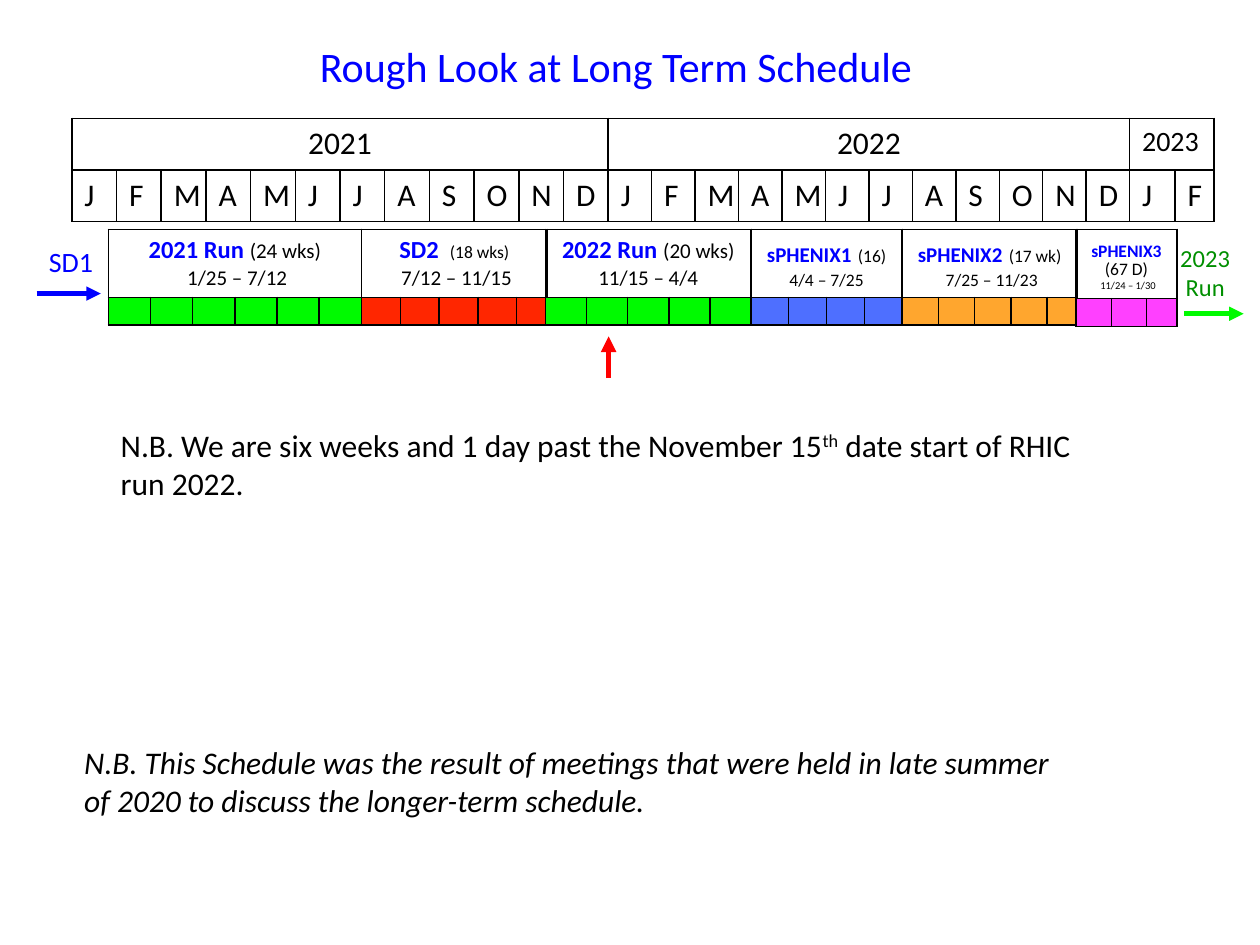
from lxml.etree import SubElement
from pptx import Presentation
from pptx.dml.color import RGBColor
from pptx.enum.shapes import MSO_CONNECTOR
from pptx.enum.text import PP_ALIGN
from pptx.oxml.ns import qn
from pptx.util import Inches, Pt

BLACK = RGBColor(0x00, 0x00, 0x00)
BLUE = RGBColor(0x00, 0x00, 0xFF)
RED = RGBColor(0xFF, 0x00, 0x00)
DARK_GREEN = RGBColor(0x00, 0x8F, 0x00)
GREEN = RGBColor(0x00, 0xFA, 0x00)
SCARLET = RGBColor(0xFF, 0x26, 0x00)
COBALT = RGBColor(0x04, 0x32, 0xFF)
ORANGE = RGBColor(0xFF, 0x93, 0x00)
MAGENTA = RGBColor(0xFF, 0x40, 0xFF)
FONT = "Calibri"
LEFT, CENTER = PP_ALIGN.LEFT, PP_ALIGN.CENTER

# Calendar: year, months shown, width in inches, size, alignment
CALENDAR_LEFT, CALENDAR_TOP, CALENDAR_ROW = 0.57, 0.94, 0.41
YEARS = [
    ("2021", "JFMAMJJASOND", [0.355] * 12, 18, CENTER),
    ("2022", "JFMAMJJASOND", [0.345] * 12, 18, CENTER),
    ("2023", "JF", [0.36, 0.31], 16, LEFT),
]

# Phases run on from one another. Lines hold (text, size) spans; the first line
# opens with its blue bold name.
PHASES_LEFT, PHASES_TOP, PHASE_ROWS = 0.86, 1.82, (0.54, 0.22)
PHASES = [
    {"name": [("2021 Run ", 14)], "lines": [[("(24 wks)", 12)], [(" 1/25 – 7/12", 12)]],
     "width": 2.01, "columns": 6, "fill": GREEN},
    {"name": [("SD2  ", 14)], "lines": [[("(18 wks)", 10)], [(" 7/12 – 11/15", 12)]],
     "width": 1.46, "columns": 5, "last": 0.23, "fill": SCARLET},
    {"name": [("2022 Run ", 14)], "lines": [[("(20 wks) 11/15 – 4/4", 12)]],
     "width": 1.63, "columns": 5, "fill": GREEN},
    {"name": [("sPHENIX1", 12), (" ", 16)], "lines": [[("(16) 4/4 – 7/25", 10)]],
     "width": 1.2, "columns": 4, "fill": COBALT, "opacity": 70},
    {"name": [("sPHENIX2", 12), (" ", 16)], "lines": [[("(17 wk)", 10)], [(" 7/25 – 11/23", 10)]],
     "width": 1.38, "columns": 5, "last": 0.23, "fill": ORANGE, "opacity": 82},
    {"name": [("sPHENIX3", 10), (" ", 16)],
     "lines": [[("(67 D)", 10)], [(" ", 8), ("11/24 – 1/30", 6)]],
     "width": 0.79, "columns": 3, "last": 0.23, "fill": MAGENTA, "spacing": 0.78},
]

# Text boxes: place, paragraphs of (text, superscript) spans, size, colour, style
TEXTS = [
    {"at": (0.29, 1.89, 0.56, 0.37), "paras": [["SD1"]], "size": 16, "color": BLUE, "wrap": False},
    {"at": (2.44, 0.27, 5.13, 0.5), "paras": [["Rough Look at Long Term Schedule"]],
     "size": 24, "color": BLUE},
    {"at": (9.2, 1.88, 0.73, 0.57), "paras": [["2023"], ["Run"]], "size": 14,
     "color": DARK_GREEN, "align": CENTER},
    {"at": (0.57, 5.85, 8.12, 0.71), "size": 18, "italic": True,
     "paras": [["N.B. This Schedule was the result of meetings that were held in late summer "
                "of 2020 to discuss the longer-term schedule."]]},
    {"at": (0.86, 3.33, 8.09, 0.71), "size": 18, "superscript": "th",
     "paras": [["N.B. We are six weeks and 1 day past the November 15", "th",
                " date start of RHIC run 2022."]]},
]

# Arrows: start, end, colour, width
ARROWS = [
    ((0.29, 2.33), (0.8, 2.33), BLUE, 2.75),
    ((9.4, 2.49), (9.87, 2.49), GREEN, 2.75),
    ((4.83, 3), (4.83, 2.67), RED, 3),
]


def add_span(para, text, size, color=BLACK, bold=False, italic=False):
    span = para.add_run()
    span.text = text
    font = span.font
    font.name, font.size, font.bold, font.italic = FONT, Pt(size), bold, italic
    font.color.rgb = color
    return span


def get_paragraph(frame, index):
    return frame.paragraphs[0] if index == 0 else frame.add_paragraph()


def add_text(slide, item):
    box = slide.shapes.add_textbox(*map(Inches, item["at"]))
    frame = box.text_frame
    frame.word_wrap = item.get("wrap", True)
    for index, texts in enumerate(item["paras"]):
        para = get_paragraph(frame, index)
        para.alignment = item.get("align", LEFT)
        for text in texts:
            span = add_span(para, text, item["size"], item.get("color", BLACK),
                            italic=item.get("italic", False))
            if text == item.get("superscript"):
                span.font._element.set("baseline", "30000")


def add_arrow(slide, start, end, color, width):
    arrow = slide.shapes.add_connector(MSO_CONNECTOR.STRAIGHT, *map(Inches, start + end))
    arrow.line.color.rgb = color
    arrow.line.width = Pt(width)
    SubElement(arrow.line._get_or_add_ln(), qn("a:tailEnd"), type="triangle")
    SubElement(arrow._element.spPr, qn("a:effectLst"))


def add_grid(slide, left, top, widths, heights):
    """Add an unfilled table whose cells all have thin black borders."""
    frame = slide.shapes.add_table(len(heights), len(widths), Inches(left), Inches(top),
                                   Inches(sum(widths)), Inches(sum(heights)))
    table = frame.table
    table.first_row = table.horz_banding = False
    for column, width in zip(table.columns, widths):
        column.width = Inches(width)
    for row, height in zip(table.rows, heights):
        row.height = Inches(height)
    for cell in table.iter_cells():
        properties = cell._tc.get_or_add_tcPr()
        for side in ("a:lnL", "a:lnR", "a:lnT", "a:lnB"):
            line = SubElement(properties, qn(side), w=str(Pt(1)))
            fill = SubElement(line, qn("a:solidFill"))
            SubElement(fill, qn("a:srgbClr"), val=str(BLACK))
        cell.fill.background()
    return table


def add_calendar(slide):
    widths = [width for year in YEARS for width in year[2]]
    table = add_grid(slide, CALENDAR_LEFT, CALENDAR_TOP, widths, [CALENDAR_ROW] * 2)
    first = 0
    for year, months, _, size, align in YEARS:
        heading = table.cell(0, first)
        heading.merge(table.cell(0, first + len(months) - 1))
        para = heading.text_frame.paragraphs[0]
        para.alignment = align
        add_span(para, year, size)
        for offset, month in enumerate(months):
            add_span(table.cell(1, first + offset).text_frame.paragraphs[0], month, 18)
        first += len(months)


def add_phase(slide, left, phase):
    count = phase["columns"]
    last = phase.get("last", phase["width"] / count)
    widths = [(phase["width"] - last) / (count - 1)] * (count - 1) + [last]
    table = add_grid(slide, left, PHASES_TOP, widths, PHASE_ROWS)
    heading = table.cell(0, 0)
    heading.merge(table.cell(0, count - 1))
    for index, line in enumerate(phase["lines"]):
        para = get_paragraph(heading.text_frame, index)
        para.alignment = CENTER
        para.line_spacing = phase.get("spacing", 1.0)
        if index == 0:
            for text, size in phase["name"]:
                add_span(para, text, size, BLUE, bold=True)
        for text, size in line:
            add_span(para, text, size)
    for column in range(count):
        cell = table.cell(1, column)
        cell.fill.solid()
        cell.fill.fore_color.rgb = phase["fill"]
        if "opacity" in phase:
            color = cell._tc.tcPr.find(qn("a:solidFill")).find(qn("a:srgbClr"))
            SubElement(color, qn("a:alpha"), val=str(phase["opacity"] * 1000))
        # A small end mark keeps the empty row from growing.
        SubElement(cell.text_frame.paragraphs[0]._p, qn("a:endParaRPr"), sz="600")


def main():
    deck = Presentation()
    deck.slide_width, deck.slide_height = Inches(10), Inches(7.5)
    slide = deck.slides.add_slide(deck.slide_layouts[6])
    add_calendar(slide)
    left = PHASES_LEFT
    for phase in PHASES:
        add_phase(slide, left, phase)
        left += phase["width"]
    for item in TEXTS:
        add_text(slide, item)
    for arrow in ARROWS:
        add_arrow(slide, *arrow)
    deck.save("out.pptx")


if __name__ == "__main__":
    main()
